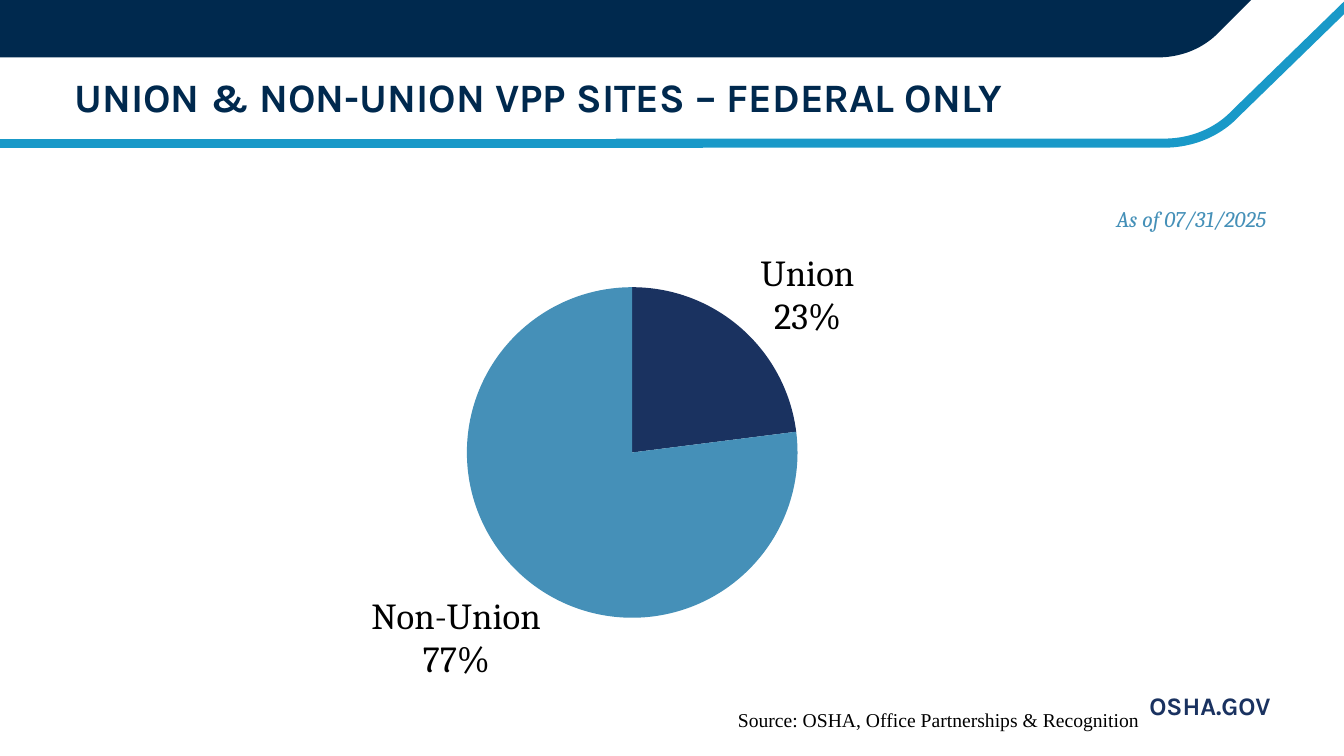
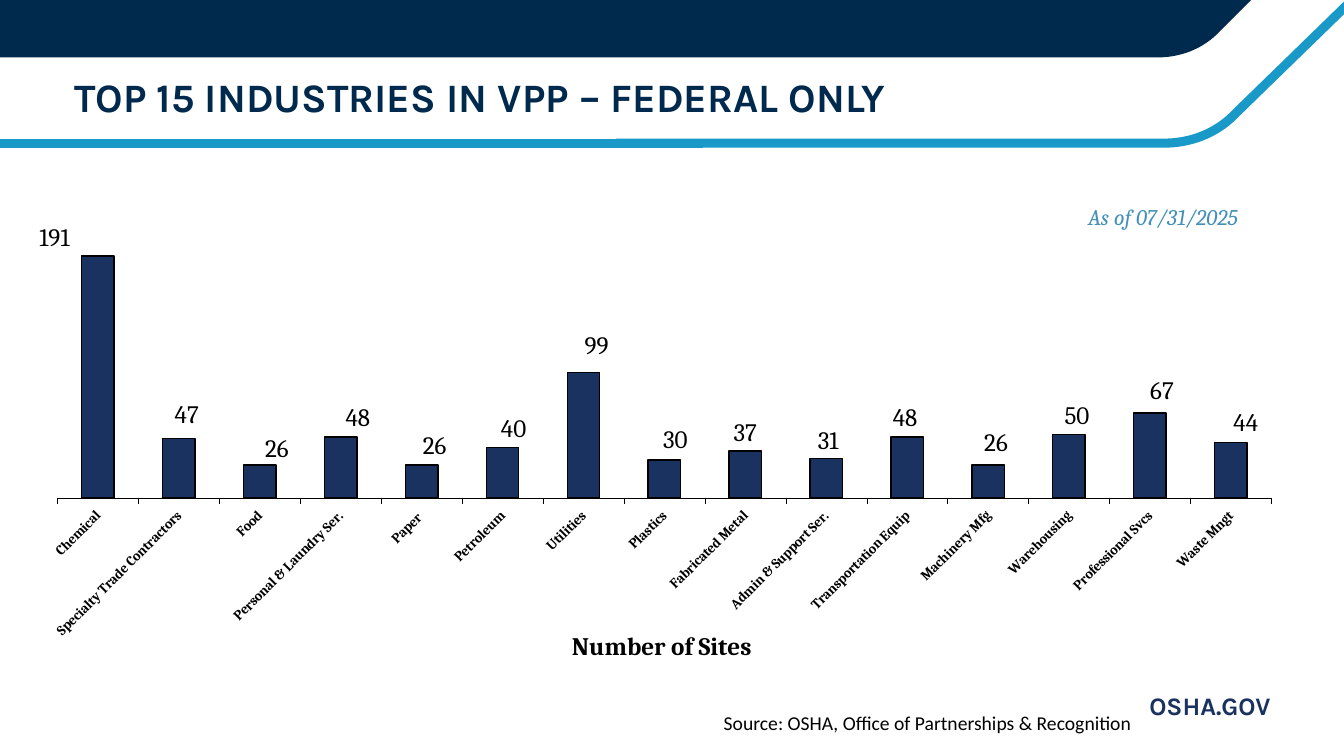
from copy import deepcopy
from dataclasses import dataclass

from lxml.etree import SubElement
from pptx import Presentation
from pptx.chart.data import CategoryChartData
from pptx.dml.color import RGBColor
from pptx.enum.chart import XL_CHART_TYPE, XL_LABEL_POSITION, XL_TICK_LABEL_POSITION, XL_TICK_MARK
from pptx.enum.shapes import MSO_CONNECTOR
from pptx.enum.text import MSO_ANCHOR, PP_ALIGN
from pptx.oxml.ns import qn
from pptx.util import Emu, Pt

WIDTH, HEIGHT = 1333, 750


@dataclass(frozen=True)
class Theme:
    """Colours, fonts and type sizes of the deck."""
    navy: str = "00294E"
    indigo: str = "1A3260"
    sky: str = "1999C8"
    steel: str = "4590B8"
    black: str = "000000"
    head: str = "Karla"
    body: str = "Cambria"
    title: float = 28.8
    site: float = 18
    date: float = 16
    source: float = 14
    pie_label: float = 26.2
    bar_label: float = 17.9
    axis_title: float = 18
    category: float = 10


T = Theme()


def px(n):
    """Turn px, 100 to the inch, into EMU."""
    return Emu(round(n * 9144))


def rgb(color):
    """Turn a hex string into a colour."""
    return RGBColor.from_string(color)


def style(font, size, color=T.black, name=T.body, bold=False, italic=False):
    """Format a font."""
    font.size, font.name, font.bold, font.italic = Pt(size), name, bold, italic
    font.color.rgb = rgb(color)


def write(tf, text, align=PP_ALIGN.LEFT, **fmt):
    """Put one formatted run in a text frame."""
    p = tf.paragraphs[0]
    p.alignment = align
    r = p.add_run()
    r.text = text
    style(r.font, **fmt)


def curve(a, b, c, d, steps=24):
    """Return points along a cubic curve from a to d."""
    ts = [i / steps for i in range(steps + 1)]
    return [tuple((1 - t) ** 3 * p + 3 * t * (1 - t) ** 2 * q + 3 * t * t * (1 - t) * u + t ** 3 * v
                  for p, q, u, v in zip(a, b, c, d)) for t in ts]


def set_layout(parent, after, **values):
    """Give a chart part a manual layout placed after a sibling."""
    for old in parent.findall(qn("c:layout")):
        parent.remove(old)
    layout = SubElement(parent, qn("c:layout"))
    manual = SubElement(layout, qn("c:manualLayout"))
    for tag, val in values.items():
        SubElement(manual, qn(f"c:{tag}")).set("val", str(val))
    if after is None:
        parent.insert(0, layout)
    else:
        after.addnext(layout)


class Deck:
    """Holds the presentation, its style and the current slide."""

    def __init__(self):
        """Start an empty deck."""
        self.prs = Presentation()
        self.prs.slide_width, self.prs.slide_height = px(WIDTH), px(HEIGHT)
        self.s = None

    def slide(self, title):
        """Add a slide with bands, title and site address."""
        self.s = self.prs.slides.add_slide(self.prs.slide_layouts[6])
        self.outline([(611, 142), *curve((1155, 142), (1181, 142), (1207, 132), (1225, 113)),
                      (1338, 3)], line=T.sky, weight=6.5)
        self.line((0, 142), (611, 142), T.sky, 6.5)
        self.outline([(0, 0), (0, 57), *curve((1148, 57), (1172, 57), (1194, 48), (1210, 31)),
                      (1241, 0)], fill=T.navy)
        self.line((525, 143), (697, 143), T.sky, 5.5)
        self.text((64, 68, 1090, 56), title, size=T.title, color=T.navy, name=T.head, bold=True)
        self.text((603, 680, 667, 40), "OSHA.GOV", align=PP_ALIGN.RIGHT, size=T.site,
                  color=T.indigo, name=T.head, bold=True)

    def text(self, box, text, **fmt):
        """Add a vertically centred text box."""
        tf = self.s.shapes.add_textbox(*map(px, box)).text_frame
        tf.word_wrap = True
        tf.vertical_anchor = MSO_ANCHOR.MIDDLE
        write(tf, text, **fmt)

    def date(self, box):
        """Add the reporting date."""
        self.text(box, "As of 07/31/2025", align=PP_ALIGN.CENTER, size=T.date,
                  color=T.steel, italic=True)

    def outline(self, points, fill=None, line=None, weight=0):
        """Add a filled outline or an open stroked one."""
        first, *rest = [(px(x), px(y)) for x, y in points]
        fb = self.s.shapes.build_freeform(*first)
        fb.add_line_segments(rest, close=fill is not None)
        sp = fb.convert_to_shape()
        sp.shadow.inherit = False
        if fill:
            sp.fill.solid()
            sp.fill.fore_color.rgb = rgb(fill)
        else:
            sp.fill.background()
        if line:
            sp.line.color.rgb, sp.line.width = rgb(line), Pt(weight)
        else:
            sp.line.fill.background()

    def line(self, start, end, color, weight):
        """Add a straight line."""
        cx = self.s.shapes.add_connector(MSO_CONNECTOR.STRAIGHT, *map(px, start + end))
        cx.line.color.rgb, cx.line.width = rgb(color), Pt(weight)
        SubElement(cx.element.spPr, qn("a:effectLst"))

    def chart(self, kind, box, plot_box, data):
        """Add a one-series chart whose plot fills a box on the slide."""
        cd = CategoryChartData()
        cd.categories = list(data)
        cd.add_series("Series 1", list(data.values()))
        chart = self.s.shapes.add_chart(kind, *map(px, box), cd).chart
        chart.has_title = chart.has_legend = False
        style(chart.font, T.bar_label)
        x, y, w, h = box
        left, top, width, height = plot_box
        area = chart.plots[0]._element.getparent()
        set_layout(area, None, layoutTarget="inner", xMode="edge", yMode="edge",
                   x=round((left - x) / w, 4), y=round((top - y) / h, 4),
                   w=round(width / w, 4), h=round(height / h, 4))
        return chart

    def labels(self, series, box, size, shifts, percent=False):
        """Label each point, moved by its shift in px."""
        dl = series.data_labels
        style(dl.font, size)
        dl.position = XL_LABEL_POSITION.OUTSIDE_END
        dl.show_value, dl.show_category_name, dl.show_percentage = not percent, percent, percent
        root = dl._element
        if percent:
            dl.number_format, dl.number_format_is_linked = "0%", False
            sep = SubElement(root, qn("c:separator"))
            sep.text = "\n"
            root.find(qn("c:showBubbleSize")).addnext(sep)
        for leader in root.findall(qn("c:showLeaderLines")):
            leader.set("val", "0")
        parts = [e for e in root if e.tag != qn("c:showLeaderLines")]
        for i, (dx, dy) in enumerate(shifts):
            label = SubElement(root, qn("c:dLbl"))
            idx = SubElement(label, qn("c:idx"))
            idx.set("val", str(i))
            label.extend(deepcopy(parts))
            set_layout(label, idx, x=round(dx / box[2], 4), y=round(dy / box[3], 4))
            root.insert(i, label)

    def pie(self, box, plot_box, data, colors, shifts):
        """Add a pie with category and percent labels."""
        chart = self.chart(XL_CHART_TYPE.PIE, box, plot_box, data)
        series = chart.plots[0].series[0]
        for i, color in enumerate(colors):
            fill = series.points[i].format.fill
            fill.solid()
            fill.fore_color.rgb = rgb(color)
        self.labels(series, box, T.pie_label, shifts, percent=True)

    def columns(self, box, plot_box, data, axis_title, top, shifts):
        """Add a column chart with slanted category names."""
        chart = self.chart(XL_CHART_TYPE.COLUMN_CLUSTERED, box, plot_box, data)
        plot = chart.plots[0]
        plot.gap_width, plot.vary_by_categories = 150, False
        series = plot.series[0]
        series.format.fill.solid()
        series.format.fill.fore_color.rgb = rgb(T.indigo)
        series.format.line.color.rgb, series.format.line.width = rgb(T.black), Pt(1)
        va, ca = chart.value_axis, chart.category_axis
        va.minimum_scale, va.maximum_scale = 0, top
        va.visible = va.has_major_gridlines = False
        ca.major_tick_mark = XL_TICK_MARK.OUTSIDE
        ca.tick_label_position = XL_TICK_LABEL_POSITION.LOW
        ca.format.line.color.rgb, ca.format.line.width = rgb(T.black), Pt(0.25)
        style(ca.tick_labels.font, T.category, bold=True)
        ca._element.find(qn("c:txPr")).find(qn("a:bodyPr")).set("rot", "-2700000")
        write(ca.axis_title.text_frame, axis_title, align=PP_ALIGN.CENTER,
              size=T.axis_title, bold=True)
        self.labels(series, box, T.bar_label, shifts)


def main():
    """Build and save the deck."""
    d = Deck()
    d.slide("UNION & NON-UNION VPP SITES – FEDERAL ONLY")
    d.pie((0, 173, 1230, 556), (190, 285, 874, 328), {"Union": 23, "Non-Union": 77},
          (T.indigo, T.steel), ((15, 15), (22, 15)))
    d.date((1069, 179, 225, 75))
    d.text((722, 694, 431, 40), "Source: OSHA, Office Partnerships & Recognition",
           size=T.source, name="Times New Roman")

    d.slide("TOP 15 INDUSTRIES IN VPP – FEDERAL ONLY")
    sites = {"Chemical": 191, "Specialty Trade Contractors": 47, "Food": 26,
             "Personal & Laundry Ser.": 48, "Paper ": 26, "Petroleum": 40, "Utilities": 99,
             "Plastics": 30, "Fabricated Metal": 37, "Admin & Support Ser.": 31,
             "Transportation Equip": 48, "Machinery Mfg": 26, "Warehousing": 50,
             "Professional Svcs": 67, "Waste Mngt": 44}
    shifts = ((-43, 1), (8, -5), (17, 3), (17, 0), (13, 0), (11, 0), (13, -8), (11, -1),
              (0, 1), (2, 1), (-2, 0), (8, -3), (8, 0), (12, -3), (15, 0))
    d.columns((4, 177, 1266, 487), (57, 180, 1204, 314), sites, "Number of Sites", 250, shifts)
    d.date((1012, 177, 283, 75))
    d.text((708, 697, 450, 40), "Source: OSHA, Office of Partnerships & Recognition",
           size=T.source, name="Calibri")
    d.prs.save("out.pptx")


if __name__ == "__main__":
    main()
